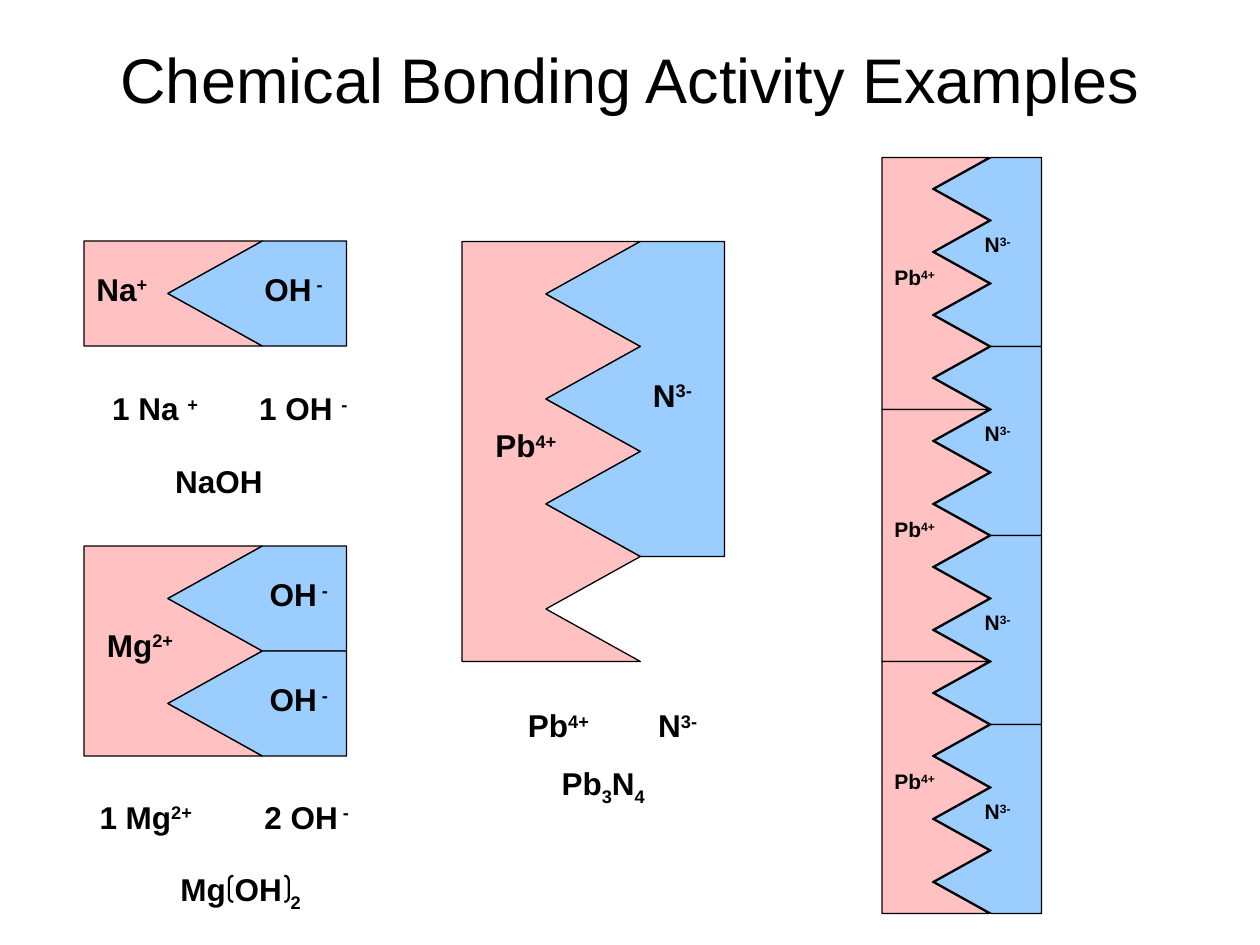
import dataclasses
import typing

import pptx
import pptx.dml.color
import pptx.enum.shapes
import pptx.enum.text
import pptx.util

Color = pptx.dml.color.RGBColor


@dataclasses.dataclass(frozen=True)
class Theme:
    font: str = "Arial"
    ink: Color = Color(0, 0, 0)
    pink: Color = Color(0xFF, 0xC1, 0xC1)
    blue: Color = Color(0x9B, 0xCD, 0xFF)
    title: int = 36
    body: int = 18
    small: int = 12


class Label(typing.NamedTuple):
    """Text in pieces split by |, where ^ raises and _ lowers a piece."""
    text: str
    col: float
    row: float
    wide: float
    size: int = 18
    wrap: bool = False


class Tile(typing.NamedTuple):
    """An ion: a straight side at flat, teeth running from tip to notch."""
    color: Color
    flat: float
    tip: float
    notch: float
    top: float
    teeth: int
    pitch: float
    label: Label


THEME = Theme()
CELL = pptx.util.Inches(1) / 12  # the slide is 120 columns by 90 rows
SHIFT = {"^": "30000", "_": "-25000"}
BIG, LOW = 10, 6  # tooth heights in rows


def cells(*spans: float) -> list[pptx.util.Emu]:
    return [pptx.util.Emu(round(span * CELL)) for span in spans]


def write(shapes, label: Label):
    high = label.size * 0.2 + 1.2
    box = shapes.add_textbox(*cells(label.col, label.row, label.wide, high))
    frame = box.text_frame
    frame.word_wrap = label.wrap
    para = frame.paragraphs[0]
    para.font.name = THEME.font
    para.font.size = pptx.util.Pt(label.size)
    para.font.bold = True
    para.font.color.rgb = THEME.ink
    for piece in label.text.split("|"):
        run = para.add_run()
        run.text = piece.lstrip("^_")
        if piece[0] in SHIFT:
            run._r.get_or_add_rPr().set("baseline", SHIFT[piece[0]])
    return box


def outline(shape, width: float) -> None:
    shape.shadow.inherit = False
    shape.line.color.rgb = THEME.ink
    shape.line.width = pptx.util.Pt(width)


def draw(shapes, tile: Tile) -> None:
    group = shapes.add_group_shape().shapes
    edge = [(tile.tip, tile.top)]
    for tooth in range(tile.teeth):
        row = tile.top + tooth * tile.pitch
        edge += [(tile.notch, row + tile.pitch / 2),
                 (tile.tip, row + tile.pitch)]
    edge.append((tile.flat, edge[-1][1]))
    pen = group.build_freeform(*cells(tile.flat, tile.top))
    pen.add_line_segments([cells(*point) for point in edge], close=True)
    shape = pen.convert_to_shape()
    shape.fill.solid()
    shape.fill.fore_color.rgb = tile.color
    outline(shape, 0.75)
    write(group, tile.label)


def tiles() -> list[Tile]:
    pink, blue, small = THEME.pink, THEME.blue, THEME.small
    out = [
        Tile(pink, 8, 25, 16, 22.95, 1, BIG, Label("Na|^+", 8, 25.1, 7.4)),
        Tile(pink, 44, 61, 52, 23, 4, BIG, Label("Pb|^4+", 46, 40, 8.4)),
        Tile(blue, 33, 25, 16, 22.95, 1, BIG, Label("OH|^ -", 24, 25.1, 8.2)),
        Tile(pink, 8, 25, 16, 52, 2, BIG, Label("Mg|^2+", 9, 59, 8.9)),
        Tile(blue, 69, 61, 52, 23, 3, BIG, Label("N|^3-", 61, 35.2, 6.4)),
    ]
    for top in (52, 52 + BIG):
        out.append(Tile(blue, 33, 25, 16, top, 1, BIG,
                        Label("OH|^ -", 24.5, top + 2.2, 8.2)))
    for lead in range(3):
        top = 15 + lead * 4 * LOW
        out.append(Tile(pink, 84, 94.2, 88.8, top, 4, LOW,
                        Label("Pb|^4+", 84, top + 9.6, 6.4, small)))
    for nitride in range(4):
        top = 15 + nitride * 3 * LOW
        out.append(Tile(blue, 99.2, 94.4, 89, top, 3, LOW,
                        Label("N|^3-", 92.6, top + 6.5, 5, small)))
    return out


FORMULAS = [
    Label("1 Na |^+", 9.5, 36.5, 11, wrap=True),
    Label("1 OH |^-", 23.5, 36.5, 11, wrap=True),
    Label("NaOH", 15.5, 43.4, 14, wrap=True),
    Label("1 Mg|^2+", 8.3, 75.4, 12.7, wrap=True),
    Label("2 OH|^ -", 24, 75.4, 11, wrap=True),
    Label("Mg OH |_2", 16, 82.3, 16.7, wrap=True),
    Label("Pb|^4+", 49.1, 66.7, 8.4),
    Label("N|^3-", 61.5, 66.7, 6.4),
    Label("Pb|_3|N|_4", 52.3, 72.2, 10.4),
]


def main() -> None:
    deck = pptx.Presentation()
    deck.slide_width, deck.slide_height = cells(120, 90)
    shapes = deck.slides.add_slide(deck.slide_layouts[6]).shapes

    title = write(shapes, Label("Chemical Bonding Activity Examples",
                                6, 0, 108, THEME.title, True))
    title.height = cells(15)[0]
    title.text_frame.vertical_anchor = pptx.enum.text.MSO_ANCHOR.MIDDLE
    head = title.text_frame.paragraphs[0]
    head.alignment = pptx.enum.text.PP_ALIGN.CENTER
    head.font.bold = False

    for tile in tiles():
        draw(shapes, tile)
    for label in FORMULAS:
        write(shapes, label)

    pair = shapes.add_shape(pptx.enum.shapes.MSO_SHAPE.DOUBLE_BRACKET,
                            *cells(21.8, 83.4, 5.7, 2.5))
    pair.fill.background()
    outline(pair, 1.25)

    deck.save("out.pptx")


if __name__ == "__main__":
    main()
